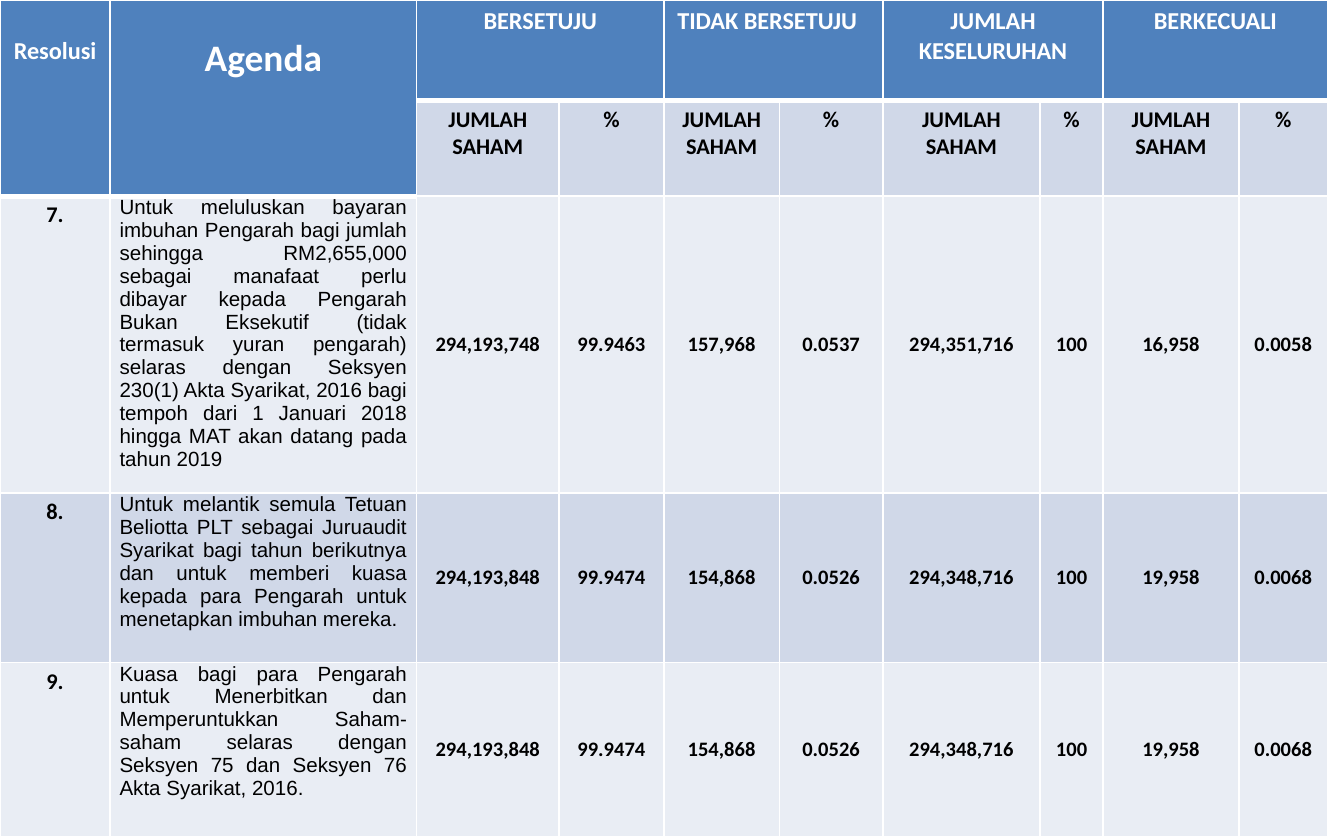
import pptx
import pptx.util
import pptx.dml.color
import pptx.enum.text
import pptx.oxml
import pptx.oxml.ns
from pptx.util import Inches

COLORS = {"header": "4F81BD", "band": "D0D8E8", "light": "E9EDF4",
          "white": "FFFFFF", "black": "000000"}
ALIGN = pptx.enum.text.PP_ALIGN
ANCHOR = pptx.enum.text.MSO_ANCHOR
WIDTHS = [0.82, 2.28, 1.06, 0.78, 0.86, 0.77, 1.17, 0.47, 1.01, 0.66]
HEIGHTS = [0.75, 0.71, 2.21, 1.26, 1.3]
GROUPS = ["BERSETUJU", "TIDAK BERSETUJU", "JUMLAH KESELURUHAN", "BERKECUALI"]
RESOLUTIONS = [
    ("7.", "Untuk meluluskan bayaran imbuhan Pengarah bagi jumlah sehingga "
     "RM2,655,000 sebagai manafaat perlu dibayar kepada Pengarah Bukan Eksekutif "
     "(tidak termasuk yuran pengarah) selaras dengan Seksyen 230(1) Akta Syarikat, "
     "2016 bagi tempoh dari 1 Januari 2018 hingga MAT akan datang pada tahun 2019",
     ["294,193,748", "99.9463", "157,968", "0.0537",
      "294,351,716", "100", "16,958", "0.0058"]),
    ("8.", "Untuk melantik semula Tetuan Beliotta PLT sebagai Juruaudit Syarikat "
     "bagi tahun berikutnya dan untuk memberi kuasa kepada para Pengarah untuk "
     "menetapkan imbuhan mereka.",
     ["294,193,848", "99.9474", "154,868", "0.0526",
      "294,348,716", "100", "19,958", "0.0068"]),
    ("9.", "Kuasa bagi para Pengarah untuk Menerbitkan dan Memperuntukkan "
     "Saham-saham selaras dengan Seksyen 75 dan Seksyen 76 Akta Syarikat, 2016.",
     ["294,193,848", "99.9474", "154,868", "0.0526",
      "294,348,716", "100", "19,958", "0.0068"]),
]


def set_borders(cell, bottom):
    """Draw white cell edges, with the bottom one as wide as given in points."""
    tcPr = cell._tc.get_or_add_tcPr()
    edges = [("lnL", 1), ("lnR", 1), ("lnT", 1), ("lnB", bottom)]
    for i, (tag, width) in enumerate(edges):
        tcPr.insert(i, pptx.oxml.parse_xml(
            f'<a:{tag} {pptx.oxml.ns.nsdecls("a")} w="{pptx.util.Pt(width)}">'
            f'<a:solidFill><a:srgbClr val="{COLORS["white"]}"/></a:solidFill></a:{tag}>'))


def fill_cell(cell, text, fill, size, color="black", font="Calibri", bold=True,
              align=ALIGN.CENTER, anchor=ANCHOR.TOP, side=0.1, top=0.04, bottom=0.04):
    cell.fill.solid()
    cell.fill.fore_color.rgb = pptx.dml.color.RGBColor.from_string(COLORS[fill])
    cell.vertical_anchor = anchor
    cell.margin_left = cell.margin_right = Inches(side)
    cell.margin_top, cell.margin_bottom = Inches(top), Inches(bottom)
    p = cell.text_frame.paragraphs[0]
    p.alignment = align
    r = p.add_run()
    r.text = text
    r.font.name, r.font.size, r.font.bold = font, pptx.util.Pt(size), bold
    r.font.color.rgb = pptx.dml.color.RGBColor.from_string(COLORS[color])


prs = pptx.Presentation()
prs.slide_width, prs.slide_height = Inches(10), Inches(6.25)
s = prs.slides.add_slide(prs.slide_layouts[6])
table = s.shapes.add_table(len(HEIGHTS), len(WIDTHS), 0, 0,
                           Inches(sum(WIDTHS)), Inches(sum(HEIGHTS))).table
for column, width in zip(table.columns, WIDTHS):
    column.width = Inches(width)
for row, height in zip(table.rows, HEIGHTS):
    row.height = Inches(height)

# Header rows
for col, (text, size) in enumerate([("Resolusi", 13), ("Agenda", 20)]):
    table.cell(0, col).merge(table.cell(1, col))
    fill_cell(table.cell(0, col), text, "header", size, "white", top=0.27, bottom=0.05)
for i, group in enumerate(GROUPS):
    col = 2 + 2 * i
    table.cell(0, col).merge(table.cell(0, col + 1))
    align = ALIGN.LEFT if group == "TIDAK BERSETUJU" else ALIGN.CENTER
    fill_cell(table.cell(0, col), group, "header", 13, "white",
              align=align, top=0.05, bottom=0.05)
    fill_cell(table.cell(1, col), "JUMLAH SAHAM", "band", 12)
    fill_cell(table.cell(1, col + 1), "%", "band", 12)

# One row per resolution
for row, (number, agenda, values) in enumerate(RESOLUTIONS, start=2):
    fill = "band" if row % 2 else "light"
    fill_cell(table.cell(row, 0), number, fill, 12)
    fill_cell(table.cell(row, 1), agenda, fill, 11, font="Arial", bold=False,
              align=ALIGN.JUSTIFY, side=0.07, top=0, bottom=0)
    for col, value in enumerate(values, start=2):
        fill_cell(table.cell(row, col), value, fill, 11, anchor=ANCHOR.MIDDLE,
                  side=0.07, top=0, bottom=0)

for row in range(len(HEIGHTS)):
    for col in range(len(WIDTHS)):
        header = row == 0 or (row == 1 and col < 2)
        set_borders(table.cell(row, col), 3 if header else 1)

prs.save("out.pptx")
